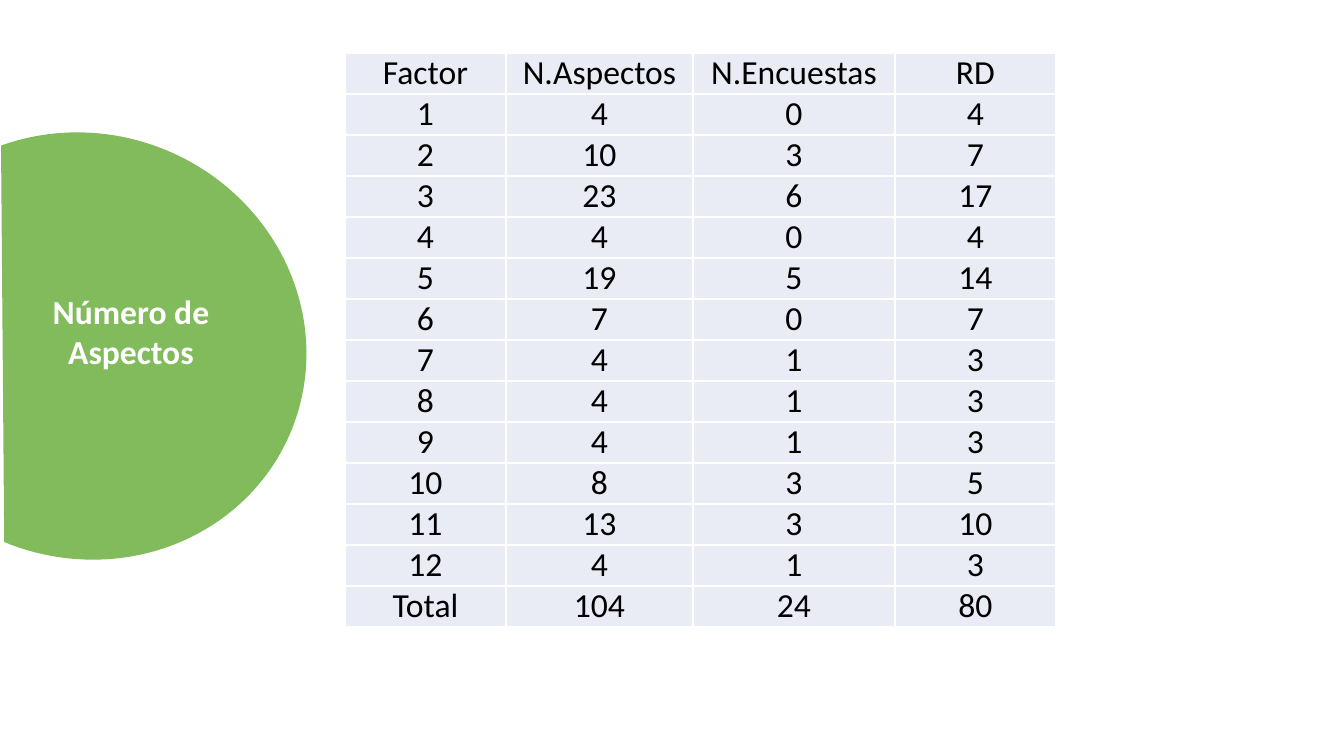
from lxml import etree
from pptx import Presentation, util as u
from pptx.dml.color import RGBColor
from pptx.enum import shapes, text
from pptx.oxml.ns import qn

PX = 914400 / 100.8
COLORS = {"green": "82BB5B", "white": "FFFFFF", "black": "000000", "cell": "E9EBF5"}
COLUMN_WIDTHS = (161, 187, 202, 161)
ROW_HEIGHT = 41
HEADINGS = ("Factor", "N.Aspectos", "N.Encuestas", "RD")
FACTORS = [
    (1, 4, 0, 4),
    (2, 10, 3, 7),
    (3, 23, 6, 17),
    (4, 4, 0, 4),
    (5, 19, 5, 14),
    (6, 7, 0, 7),
    (7, 4, 1, 3),
    (8, 4, 1, 3),
    (9, 4, 1, 3),
    (10, 8, 3, 5),
    (11, 13, 3, 10),
    (12, 4, 1, 3),
]
TOTALS = ("Total", 104, 24, 80)


def px(length):
    """Turn pixels into EMU."""
    return u.Emu(round(length * PX))


def color(name):
    """Return a named colour."""
    return RGBColor.from_string(COLORS[name])


def write(frame, words, color_name, bold=False):
    """Put centred 24 pt words in a text frame."""
    frame.text = words
    paragraph = frame.paragraphs[0]
    paragraph.alignment = text.PP_ALIGN.CENTER
    font = paragraph.runs[0].font
    font.name, font.size, font.bold = "Calibri", u.Pt(24), bold
    font.color.rgb = color(color_name)


def add_title(slide, left, top, width, height):
    """Draw the green chord in the box, with the title over it."""
    chord = slide.shapes.add_shape(
        shapes.MSO_SHAPE.CHORD, px(left), px(top), px(width), px(height))
    chord.adjustments[0], chord.adjustments[1] = 26.92, 162
    chord.rotation = 202.4
    chord.shadow.inherit = False
    chord.fill.solid()
    chord.fill.fore_color.rgb = color("green")
    chord.line.fill.background()
    title = slide.shapes.add_textbox(px(left + 118), px(top + 152), px(302), px(92))
    title.text_frame.word_wrap = True
    write(title.text_frame, "Número de Aspectos", "white", bold=True)


def style_cell(cell):
    """Give a cell white borders, a pale fill and tight margins."""
    properties = cell._tc.get_or_add_tcPr()
    for side in ("lnL", "lnR", "lnT", "lnB"):
        border = etree.SubElement(properties, qn(f"a:{side}"), w=str(u.Pt(1)))
        fill = etree.SubElement(border, qn("a:solidFill"))
        etree.SubElement(fill, qn("a:srgbClr"), val=COLORS["white"])
    cell.fill.solid()
    cell.fill.fore_color.rgb = color("cell")
    cell.margin_left = cell.margin_right = px(1)
    cell.margin_top = cell.margin_bottom = 0
    cell.vertical_anchor = text.MSO_ANCHOR.BOTTOM


def add_factor_table(slide, left, top):
    """Build the table of aspects, surveys and RD per factor."""
    records = [HEADINGS, *FACTORS, TOTALS]
    table = slide.shapes.add_table(
        len(records), len(HEADINGS), px(left), px(top),
        px(sum(COLUMN_WIDTHS)), px(ROW_HEIGHT * len(records))).table
    table.first_row = table.horz_banding = False
    for column, width in zip(table.columns, COLUMN_WIDTHS):
        column.width = px(width)
    for row, record in zip(table.rows, records):
        row.height = px(ROW_HEIGHT)
        for cell, value in zip(row.cells, record):
            style_cell(cell)
            write(cell.text_frame, str(value), "black")


def main():
    """Build and save the slide."""
    deck = Presentation()
    deck.slide_width, deck.slide_height = px(1344), px(756)
    slide = deck.slides.add_slide(deck.slide_layouts[6])
    add_title(slide, -138, 134, 446, 424)
    add_factor_table(slide, 345, 53)
    deck.save("out.pptx")


if __name__ == "__main__":
    main()
